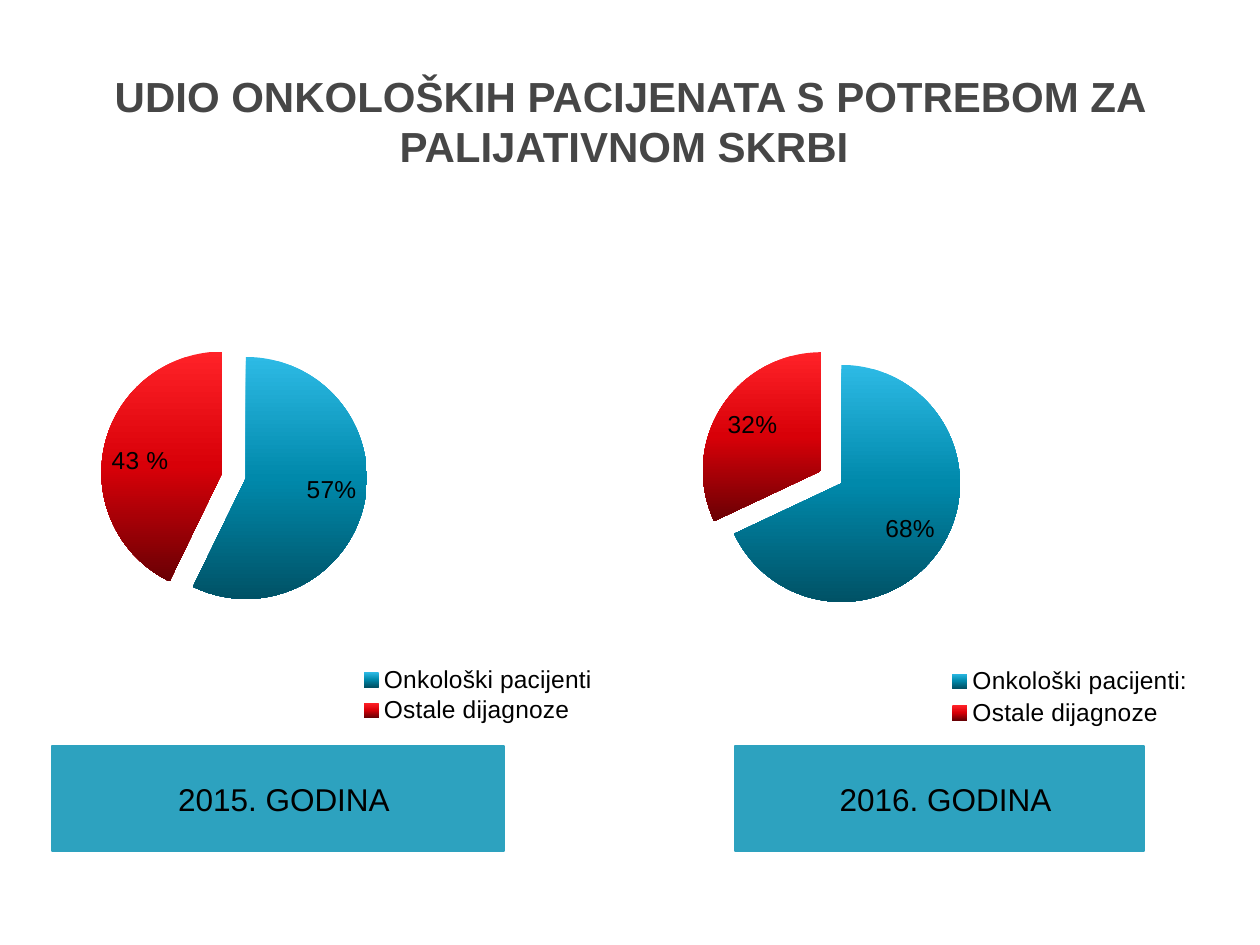
from lxml import etree
from pptx import Presentation
from pptx.chart.data import CategoryChartData
from pptx.dml.color import RGBColor
from pptx.enum.chart import XL_CHART_TYPE, XL_LABEL_POSITION, XL_LEGEND_POSITION
from pptx.enum.shapes import MSO_SHAPE
from pptx.enum.text import MSO_ANCHOR, PP_ALIGN
from pptx.oxml import parse_xml
from pptx.oxml.ns import qn
from pptx.util import Emu, Pt

PIE = XL_CHART_TYPE.PIE
INSIDE_END = XL_LABEL_POSITION.INSIDE_END
RIGHT = XL_LEGEND_POSITION.RIGHT
RECT = MSO_SHAPE.RECTANGLE
MIDDLE = MSO_ANCHOR.MIDDLE
CENTER = PP_ALIGN.CENTER

PX = 914400 // 126
FONT = "Arial"
TEAL = "2DA2BF"
SLICES = [("2DBAE5", "0089AB", "005266"), ("FF2228", "D80008", "6A0004")]
EXPLOSION = 20
DML = "http://schemas.openxmlformats.org/drawingml/2006/main"


def px(*values):
    return [Emu(v * PX) for v in values]


def rgb(value):
    return RGBColor.from_string(value)


def style(font, size, color="000000", bold=False):
    font.name, font.size, font.bold = FONT, Pt(size), bold
    font.color.rgb = rgb(color)


def write(tf, text, size, color="000000", bold=False):
    tf.word_wrap = True
    tf.vertical_anchor = MIDDLE
    p = tf.paragraphs[0]
    p.alignment = CENTER
    r = p.add_run()
    r.text = text
    style(r.font, size, color, bold)


def add_title(s, box, text):
    sp = s.shapes.add_textbox(*px(*box))
    write(sp.text_frame, text, 24, "464646", True)


def add_year(s, box, text):
    sp = s.shapes.add_shape(RECT, *px(*box))
    sp.shadow.inherit = False
    sp.fill.solid()
    sp.fill.fore_color.rgb = rgb(TEAL)
    sp.line.color.rgb = rgb(TEAL)
    sp.line.width = Pt(0.75)
    tf = sp.text_frame
    tf.margin_left, tf.margin_right = px(25, 13)
    write(tf, text, 18)


def set_layout(parent, index, box, part, inner=False):
    for old in parent.findall(qn("c:layout")):
        parent.remove(old)
    layout = etree.Element(qn("c:layout"))
    manual = etree.SubElement(layout, qn("c:manualLayout"))
    x, y, w, h = part
    values = [("xMode", "edge"), ("yMode", "edge"),
              ("x", x / box[2]), ("y", y / box[3]),
              ("w", w / box[2]), ("h", h / box[3])]
    if inner:
        values.insert(0, ("layoutTarget", "inner"))
    for tag, value in values:
        etree.SubElement(manual, qn(f"c:{tag}")).set("val", str(value))
    parent.insert(index, layout)


def gradient(colors):
    stops = "".join(
        f'<a:gs pos="{pos}"><a:srgbClr val="{color}"/></a:gs>'
        for pos, color in zip((0, 50000, 100000), colors))
    return parse_xml(f'<a:gradFill xmlns:a="{DML}"><a:gsLst>{stops}</a:gsLst>'
                     '<a:lin ang="5400000" scaled="0"/></a:gradFill>')


def add_pie(s, box, cats, values, labels, plot_box, legend_box):
    data = CategoryChartData(number_format="0.00%")
    data.categories = cats
    data.add_series("Series 1", values)
    chart = s.shapes.add_chart(PIE, *px(*box), data).chart
    style(chart.font, 14)
    chart.has_title = False
    chart.has_legend = True
    legend = chart.legend
    legend.position = RIGHT
    legend.include_in_layout = False
    style(legend.font, 14)
    plot = chart.plots[0]
    plot.vary_by_categories = True
    series = plot.series[0]
    for i, (label, colors) in enumerate(zip(labels, SLICES)):
        point = series.points[i]
        point.format.fill.background()
        sp_pr = series._element.xpath("c:dPt/c:spPr")[i]
        sp_pr.replace(sp_pr.find(qn("a:noFill")), gradient(colors))
        point.format.line.fill.background()
        if i == 1:
            explosion = etree.Element(qn("c:explosion"))
            explosion.set("val", str(EXPLOSION))
            sp_pr.addprevious(explosion)
        r = point.data_label.text_frame.paragraphs[0].add_run()
        r.text = label
        style(r.font, 14)
        point.data_label.position = INSIDE_END
    dl = series.data_labels
    dl.show_value = True
    dl.number_format = "0.00%"
    dl.number_format_is_linked = False
    style(dl.font, 14)
    set_layout(plot._element.getparent(), 0, box, plot_box, inner=True)
    set_layout(legend._element, 1, box, legend_box)


def main():
    prs = Presentation()
    prs.slide_width, prs.slide_height = px(1260, 945)
    s = prs.slides.add_slide(prs.slide_layouts[6])
    add_title(s, (63, 42, 1134, 157),
              "UDIO ONKOLOŠKIH PACIJENATA S POTREBOM ZA PALIJATIVNOM SKRBI ")
    add_year(s, (52, 746, 452, 105), "2015. GODINA")
    add_year(s, (735, 746, 409, 105), "2016. GODINA")
    add_pie(s, (63, 199, 557, 543),
            ["Onkološki pacijenti", "Ostale dijagnoze"], [0.572, 0.428],
            ["57%", "43 %"], (62, 158, 242, 242), (297, 464, 236, 64))
    add_pie(s, (651, 210, 578, 525),
            ["Onkološki pacijenti:", "Ostale dijagnoze"], [0.68, 0.32],
            ["68%", "32%"], (72, 155, 237, 237), (296, 453, 246, 68))
    prs.save("out.pptx")


if __name__ == "__main__":
    main()
